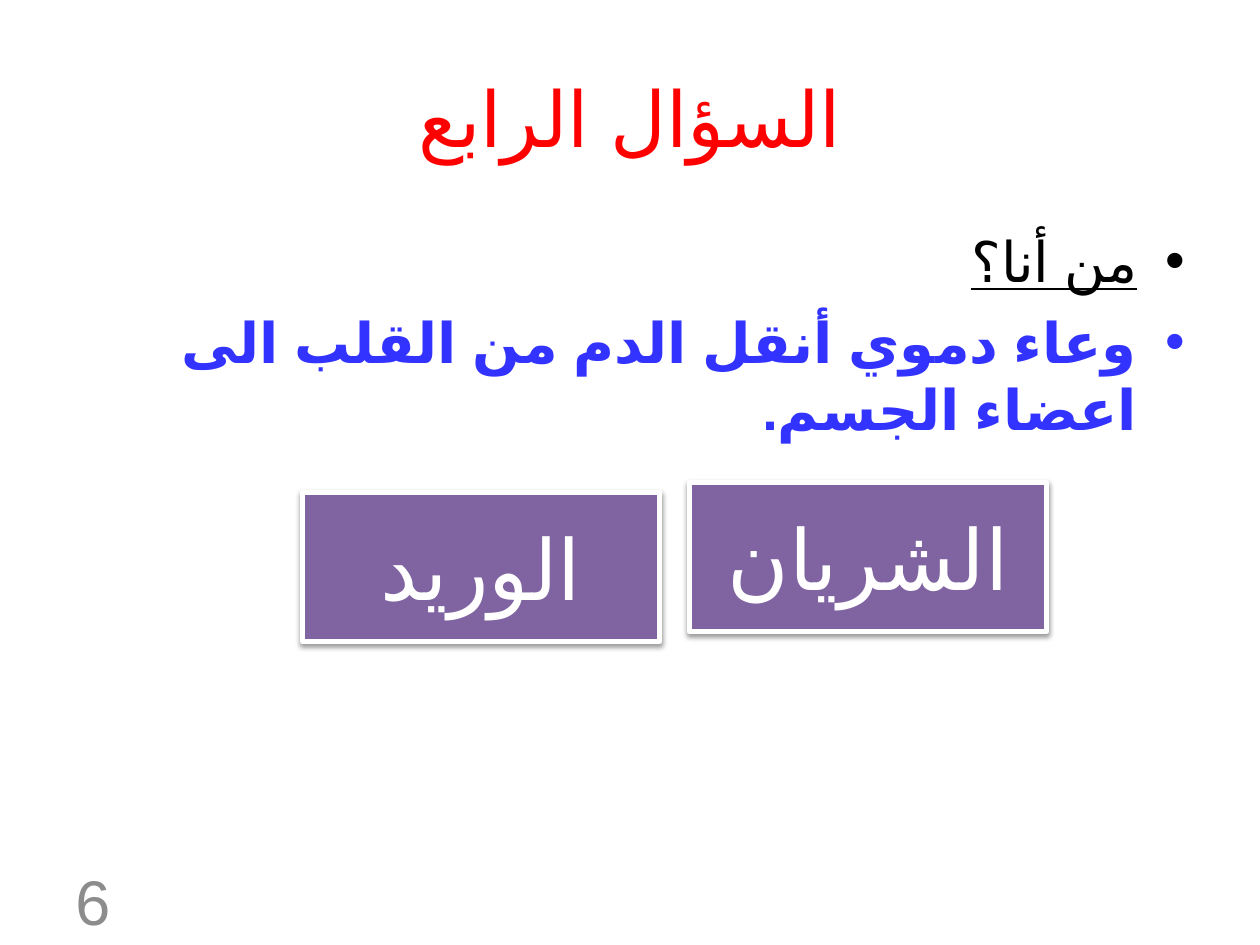
from lxml.etree import SubElement
from pptx import Presentation
from pptx.dml.color import RGBColor
from pptx.enum.lang import MSO_LANGUAGE_ID
from pptx.enum.shapes import MSO_SHAPE
from pptx.enum.text import MSO_ANCHOR, PP_ALIGN
from pptx.oxml import parse_xml
from pptx.oxml.ns import nsdecls, qn
from pptx.util import Cm, Pt

FONT = "Calibri"
ARABIC_FONT = "Arial"
COLORS = {
    "title": "FF0000",
    "prompt": "000000",
    "question": "3333FF",
    "answer": "8064A2",
    "white": "FFFFFF",
    "number": "8C8C8C",
}


def rgb(name):
    return RGBColor.from_string(COLORS[name])


def write(p, text, size, color, align, bold=None, underline=None):
    """Add one right-to-left Arabic run to a paragraph."""
    p.alignment = align
    p._p.get_or_add_pPr().set("rtl", "1")
    r = p.add_run()
    r.text = text
    font = r.font
    font.name, font.size = FONT, Pt(size)
    font.bold, font.underline = bold, underline
    font.color.rgb = rgb(color)
    font.language_id = MSO_LANGUAGE_ID.ARABIC
    SubElement(r._r.get_or_add_rPr(), qn("a:cs")).set("typeface", ARABIC_FONT)


def add_bullet(p):
    p.space_before = Pt(7.4)
    pPr = p._p.get_or_add_pPr()
    pPr.set("marL", str(Cm(0.95)))
    pPr.set("indent", str(-Cm(0.95)))
    SubElement(pPr, qn("a:buFont")).set("typeface", "Arial")
    SubElement(pPr, qn("a:buChar")).set("char", "•")


def add_title(slide, text):
    title = slide.shapes.title
    title.left, title.top, title.width, title.height = Cm(1.27), Cm(0.76), Cm(22.86), Cm(3.18)
    tf = title.text_frame
    tf.vertical_anchor = MSO_ANCHOR.MIDDLE
    write(tf.paragraphs[0], text, 44, "title", PP_ALIGN.CENTER)


def add_text_box(slide, left, top, width, height, anchor):
    tf = slide.shapes.add_textbox(Cm(left), Cm(top), Cm(width), Cm(height)).text_frame
    tf.word_wrap = True
    tf.vertical_anchor = anchor
    return tf


def add_question(slide, prompt, question):
    tf = add_text_box(slide, 1.27, 4.45, 22.86, 12.57, MSO_ANCHOR.TOP)
    first, second = tf.paragraphs[0], tf.add_paragraph()
    write(first, prompt, 32, "prompt", PP_ALIGN.RIGHT, underline=True)
    write(second, question, 32, "question", PP_ALIGN.RIGHT, bold=True)
    for p in (first, second):
        add_bullet(p)


def add_soft_shadow(sp):
    sp.shadow.inherit = False
    sp._element.spPr.find(qn("a:effectLst")).append(parse_xml(
        f'<a:outerShdw {nsdecls("a")} blurRad="{Pt(3.1)}" dist="{Pt(1.6)}" '
        'dir="5400000" rotWithShape="0"><a:srgbClr val="000000">'
        '<a:alpha val="38000"/></a:srgbClr></a:outerShdw>'))


def add_answer(slide, text, left, top):
    sp = slide.shapes.add_shape(MSO_SHAPE.RECTANGLE, Cm(left), Cm(top), Cm(7.2), Cm(3))
    sp.fill.solid()
    sp.fill.fore_color.rgb = rgb("answer")
    sp.line.color.rgb = rgb("white")
    sp.line.width = Pt(3)
    add_soft_shadow(sp)
    tf = sp.text_frame
    tf.vertical_anchor = MSO_ANCHOR.MIDDLE
    write(tf.paragraphs[0], text, 48, "white", PP_ALIGN.CENTER)


def add_slide_number(slide, number):
    tf = add_text_box(slide, 1.27, 17.65, 5.93, 1.01, MSO_ANCHOR.MIDDLE)
    write(tf.paragraphs[0], number, 36, "number", PP_ALIGN.LEFT)


def main():
    prs = Presentation()
    prs.slide_width, prs.slide_height = Cm(25.4), Cm(19.05)
    slide = prs.slides.add_slide(prs.slide_layouts[5])
    add_title(slide, "السؤال الرابع")
    add_question(slide, "من أنا؟", "وعاء دموي أنقل الدم من القلب الى اعضاء الجسم.")
    add_answer(slide, "الشريان", 13.9, 9.73)
    add_answer(slide, "الوريد", 6.1, 9.93)
    add_slide_number(slide, "6")
    prs.save("out.pptx")


if __name__ == "__main__":
    main()
